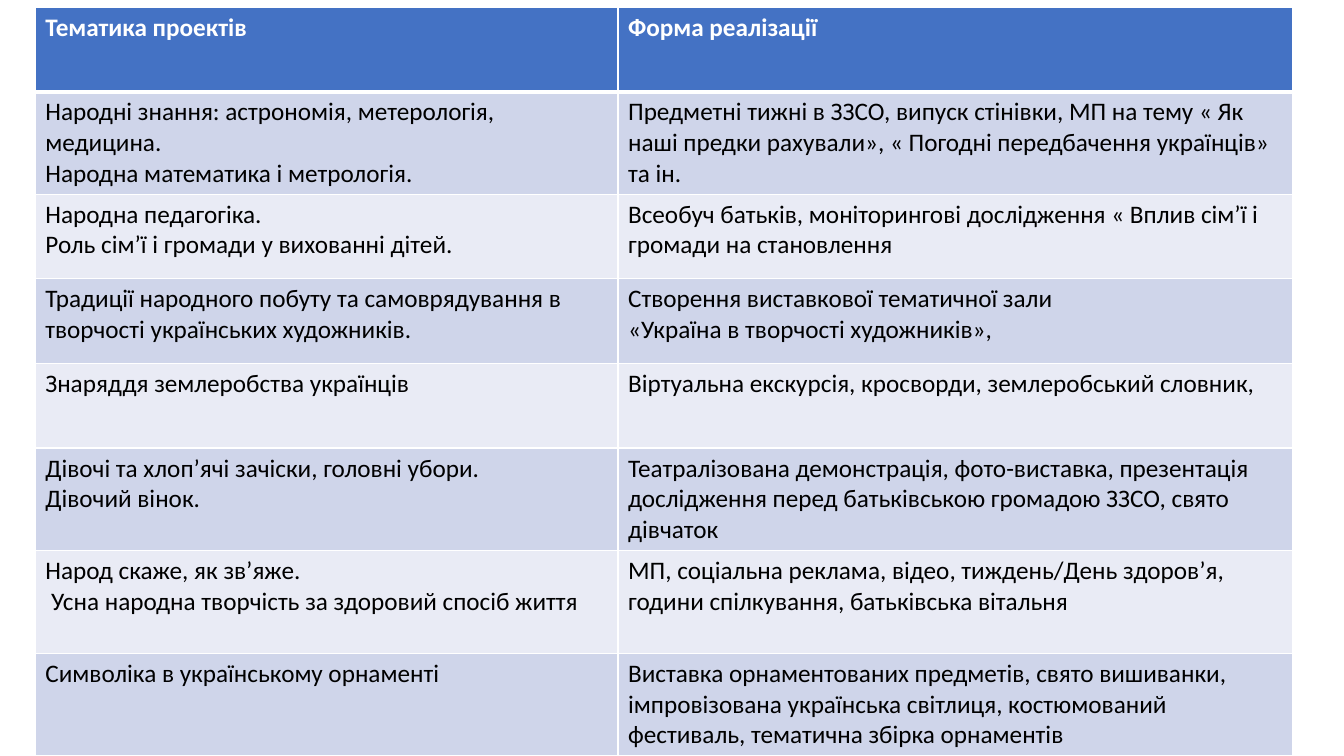
"""Builds a table slide of folk-culture project themes and their forms."""
from dataclasses import dataclass

from lxml import etree
from pptx import Presentation
from pptx import util as u
from pptx.dml import color
from pptx.oxml import ns


@dataclass(frozen=True)
class Theme:
    """Colours, font and type size of the slide."""
    font: str = "Calibri"
    size: int = 18
    header: str = "4472C4"
    bands: tuple = ("CFD5EA", "E9EBF5")
    ink: str = "000000"
    paper: str = "FFFFFF"
    rule: float = 1
    header_rule: float = 3


COLUMN_WIDTHS = (5.78, 6.69)
ROW_HEIGHTS = (0.84,) * 6 + (1.02, 0.84)
PROJECTS = [
    ("Тематика проектів", "Форма реалізації"),
    ("Народні знання: астрономія, метерологія, медицина.\n"
     "Народна математика і метрологія.",
     "Предметні тижні в ЗЗСО, випуск стінівки, МП на тему « Як наші предки "
     "рахували», « Погодні передбачення українців» та ін."),
    ("Народна педагогіка.\nРоль сім’ї і громади у вихованні дітей.",
     "Всеобуч батьків, моніторингові дослідження « Вплив сім’ї і громади на становлення"),
    ("Традиції народного побуту та самоврядування в творчості українських художників.",
     "Створення виставкової тематичної зали\n«Україна в творчості художників»,"),
    ("Знаряддя землеробства українців",
     "Віртуальна екскурсія, кросворди, землеробський словник,"),
    ("Дівочі та хлоп’ячі зачіски, головні убори.\nДівочий вінок.",
     "Театралізована демонстрація, фото-виставка, презентація дослідження "
     "перед батьківською громадою ЗЗСО, свято дівчаток"),
    ("Народ скаже, як зв’яже.\n Усна народна творчість за здоровий спосіб життя",
     "МП, соціальна реклама, відео, тиждень/День здоров’я, години спілкування, "
     "батьківська вітальня"),
    ("Символіка в українському орнаменті",
     "Виставка орнаментованих предметів, свято вишиванки, імпровізована "
     "українська світлиця, костюмований фестиваль, тематична збірка орнаментів"),
]


def write_text(frame, content, *, font, size, ink, bold=False):
    """Write each line of content as a formatted paragraph."""
    frame.text = content
    for paragraph in frame.paragraphs:
        for run in paragraph.runs:
            run.font.name = font
            run.font.size = u.Pt(size)
            run.font.bold = bold
            run.font.color.rgb = color.RGBColor.from_string(ink)


class SlideBuilder:
    """Holds the theme and the current slide."""

    def __init__(self, slide, theme):
        """Keep the slide and theme, and paint the background."""
        self.slide = slide
        self.theme = theme
        background = slide.background.fill
        background.solid()
        background.fore_color.rgb = color.RGBColor.from_string(theme.paper)

    def border(self, cell, widths):
        """Draw the left, right, top and bottom cell borders."""
        properties = cell._tc.get_or_add_tcPr()
        for position, (side, width) in enumerate(zip("LRTB", widths)):
            line = etree.Element(ns.qn(f"a:ln{side}"), w=str(int(u.Pt(width))))
            fill = etree.SubElement(line, ns.qn("a:solidFill"))
            etree.SubElement(fill, ns.qn("a:srgbClr"), val=self.theme.paper)
            properties.insert(position, line)

    def cell(self, cell, content, row):
        """Fill, border and write one table cell."""
        theme = self.theme
        header = row == 0
        background = theme.header if header else theme.bands[(row - 1) % 2]
        cell.fill.solid()
        cell.fill.fore_color.rgb = color.RGBColor.from_string(background)
        top = theme.header_rule if row == 1 else theme.rule
        bottom = theme.header_rule if header else theme.rule
        self.border(cell, (theme.rule, theme.rule, top, bottom))
        write_text(cell.text_frame, content, font=theme.font, size=theme.size,
                   ink=theme.paper if header else theme.ink, bold=header)

    def table(self, left, top, rows, widths, heights):
        """Add a table with a header row and banded body rows."""
        table = self.slide.shapes.add_table(
            len(rows), len(widths), u.Inches(left), u.Inches(top),
            u.Inches(sum(widths)), u.Inches(sum(heights))).table
        for column, width in zip(table.columns, widths):
            column.width = u.Inches(width)
        for row, height in zip(table.rows, heights):
            row.height = u.Inches(height)
        for row_index, contents in enumerate(rows):
            for column_index, content in enumerate(contents):
                self.cell(table.cell(row_index, column_index), content, row_index)


def main():
    """Build and save the presentation."""
    presentation = Presentation()
    presentation.slide_width = u.Inches(13.33)
    presentation.slide_height = u.Inches(7.5)
    slide = presentation.slides.add_slide(presentation.slide_layouts[6])
    builder = SlideBuilder(slide, Theme())
    builder.table(0.35, 0.07, PROJECTS, COLUMN_WIDTHS, ROW_HEIGHTS)
    presentation.save("out.pptx")


if __name__ == "__main__":
    main()
